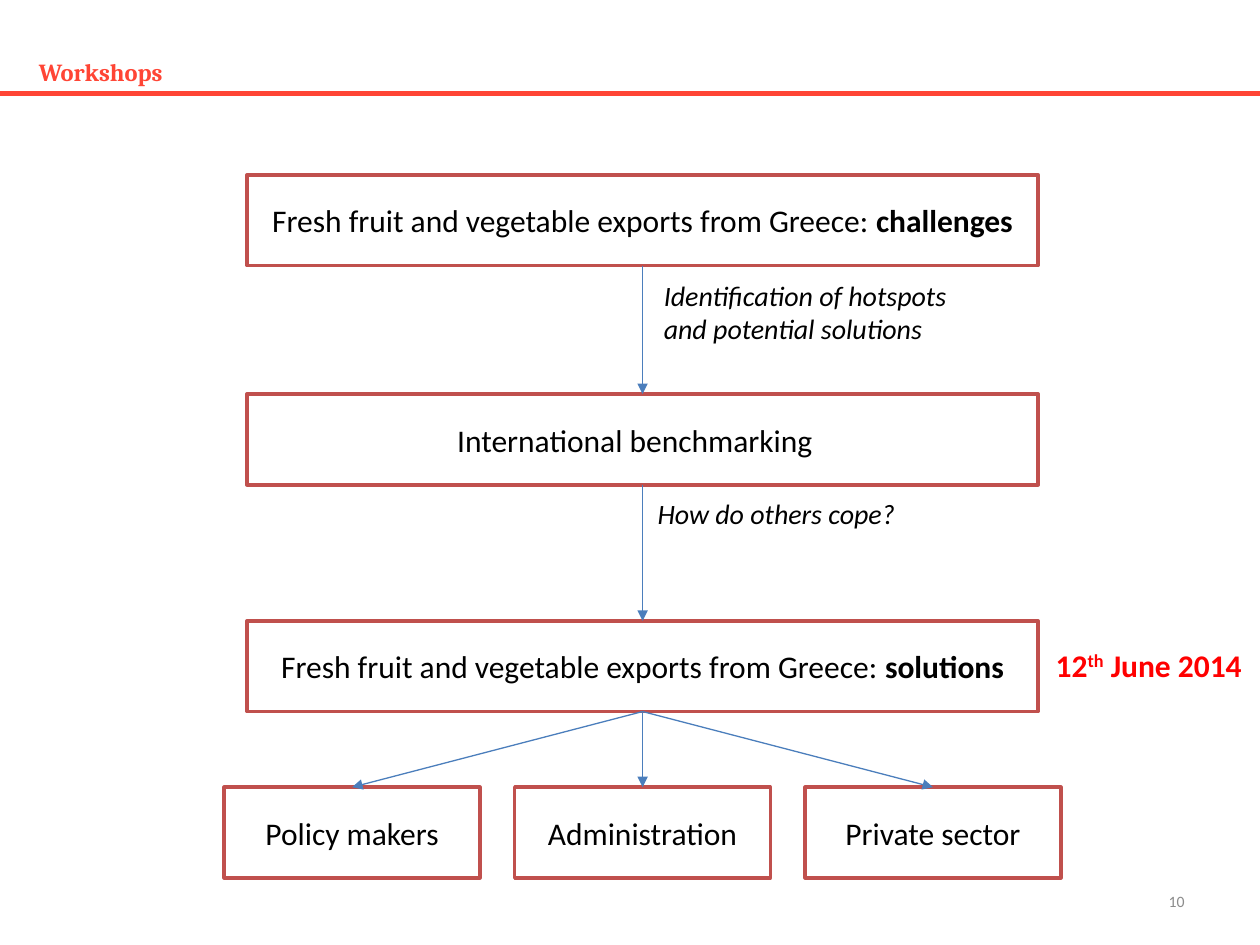
from dataclasses import dataclass

from lxml.etree import SubElement
from pptx import Presentation
from pptx.dml.color import RGBColor
from pptx.enum.shapes import MSO_CONNECTOR, MSO_SHAPE
from pptx.enum.text import MSO_ANCHOR, PP_ALIGN
from pptx.oxml.ns import qn
from pptx.util import Inches, Pt

WIDTH, HEIGHT = 10, 7.5


@dataclass(frozen=True)
class Theme:
    accent: str = "FF4535"
    outline: str = "C0504D"
    arrow: str = "4B7EBC"
    paper: str = "FFFFFF"
    ink: str = "000000"
    alert: str = "FF0000"
    muted: str = "8C8C8C"
    heading_font: str = "Cambria"
    body_font: str = "Calibri"
    heading_size: float = 14
    step_size: float = 18
    note_size: float = 16
    number_size: float = 9


THEME = Theme()

# Flow grid, as shares of the slide's width and height
CENTRE = 0.51
STEP_WIDTH, BOX_HEIGHT = 0.628, 0.096
STEP_TOPS = (0.185, 0.417, 0.657)
AUDIENCE_TOP, AUDIENCE_WIDTH, AUDIENCE_PITCH = 0.833, 0.203, 0.2305


def across(share):
    return Inches(WIDTH * share)


def down(share):
    return Inches(HEIGHT * share)


def color(value):
    return RGBColor.from_string(value)


def write(frame, lines, size, ink=THEME.ink, font=THEME.body_font,
          align=PP_ALIGN.LEFT, bold=False, italic=False):
    """Each line is a list of (text, style) spans; style is "", "bold" or "super"."""
    for index, line in enumerate(lines):
        para = frame.paragraphs[0] if index == 0 else frame.add_paragraph()
        para.alignment = align
        para.font.name, para.font.size = font, Pt(size)
        para.font.color.rgb = color(ink)
        para.font.italic = italic
        if bold:
            para.font.bold = True
        for text, style in line:
            span = para.add_run()
            span.text = text
            if style == "bold":
                span.font.bold = True
            elif style == "super":
                span._r.get_or_add_rPr().set("baseline", "30000")


def add_text(page, left, top, width, height, lines, size,
             anchor=MSO_ANCHOR.TOP, wrap=False, **style):
    box = page.shapes.add_textbox(across(left), down(top), across(width), down(height))
    box.text_frame.word_wrap = wrap
    box.text_frame.vertical_anchor = anchor
    write(box.text_frame, lines, size, **style)


def add_box(page, centre, top, width, spans):
    box = page.shapes.add_shape(MSO_SHAPE.RECTANGLE, across(centre - width / 2),
                                down(top), across(width), down(BOX_HEIGHT))
    box.shadow.inherit = False
    box.fill.solid()
    box.fill.fore_color.rgb = color(THEME.paper)
    box.line.color.rgb = color(THEME.outline)
    box.line.width = Pt(2)
    box.text_frame.word_wrap = True
    box.text_frame.vertical_anchor = MSO_ANCHOR.MIDDLE
    write(box.text_frame, [spans], THEME.step_size, align=PP_ALIGN.CENTER)
    return box


def add_line(page, start, end, ink, weight):
    line = page.shapes.add_connector(MSO_CONNECTOR.STRAIGHT, *start, *end)
    line.line.color.rgb = color(ink)
    line.line.width = Pt(weight)
    SubElement(line._element.spPr, qn("a:effectLst"))
    return line


def add_arrow(page, source, target):
    """Join the bottom of one box to the top of another."""
    arrow = add_line(page, (0, 0), (0, 0), THEME.arrow, 0.75)
    arrow.begin_connect(source, 2)
    arrow.end_connect(target, 0)
    SubElement(arrow.line._get_or_add_ln(), qn("a:tailEnd"), type="triangle")


def main():
    deck = Presentation()
    deck.slide_width, deck.slide_height = across(1), down(1)
    page = deck.slides.add_slide(deck.slide_layouts[6])

    # Heading with its rule, and page number
    add_line(page, (0, down(0.099)), (across(1), down(0.099)), THEME.accent, 2.7)
    add_text(page, 0.021, 0.052, 0.9, 0.047, [[("Workshops", "")]],
             THEME.heading_size, MSO_ANCHOR.MIDDLE, wrap=True, ink=THEME.accent,
             font=THEME.heading_font, bold=True)
    add_text(page, 0.717, 0.927, 0.233, 0.053, [[("10", "")]], THEME.number_size,
             MSO_ANCHOR.MIDDLE, wrap=True, ink=THEME.muted, align=PP_ALIGN.RIGHT)

    # Main steps
    topic = "Fresh fruit and vegetable exports from Greece: "
    step_texts = (
        [(topic, ""), ("challenges", "bold")],
        [("International benchmarking", "")],
        [(topic, ""), ("solutions", "bold")],
    )
    steps = [add_box(page, CENTRE, top, STEP_WIDTH, spans)
             for top, spans in zip(STEP_TOPS, step_texts)]
    # The benchmarking label sits slightly left of centre
    steps[1].text_frame.margin_right = across(0.022)
    for source, target in zip(steps, steps[1:]):
        add_arrow(page, source, target)

    # Audiences of the solutions workshop
    for column, name in enumerate(("Policy makers", "Administration", "Private sector")):
        centre = CENTRE + (column - 1) * AUDIENCE_PITCH
        audience = add_box(page, centre, AUDIENCE_TOP, AUDIENCE_WIDTH, [(name, "")])
        add_arrow(page, steps[-1], audience)

    # Notes beside the arrows, and the date
    add_text(page, 0.517, 0.288, 0.248, 0.085,
             [[("Identification of hotspots", "")], [("and potential solutions", "")]],
             THEME.note_size, italic=True)
    add_text(page, 0.512, 0.519, 0.211, 0.049, [[("How do others cope?", "")]],
             THEME.note_size, italic=True)
    add_text(page, 0.828, 0.677, 0.17, 0.053,
             [[("12", ""), ("th", "super"), (" June 2014", "")]],
             THEME.step_size, ink=THEME.alert, bold=True)

    deck.save("out.pptx")


if __name__ == "__main__":
    main()
